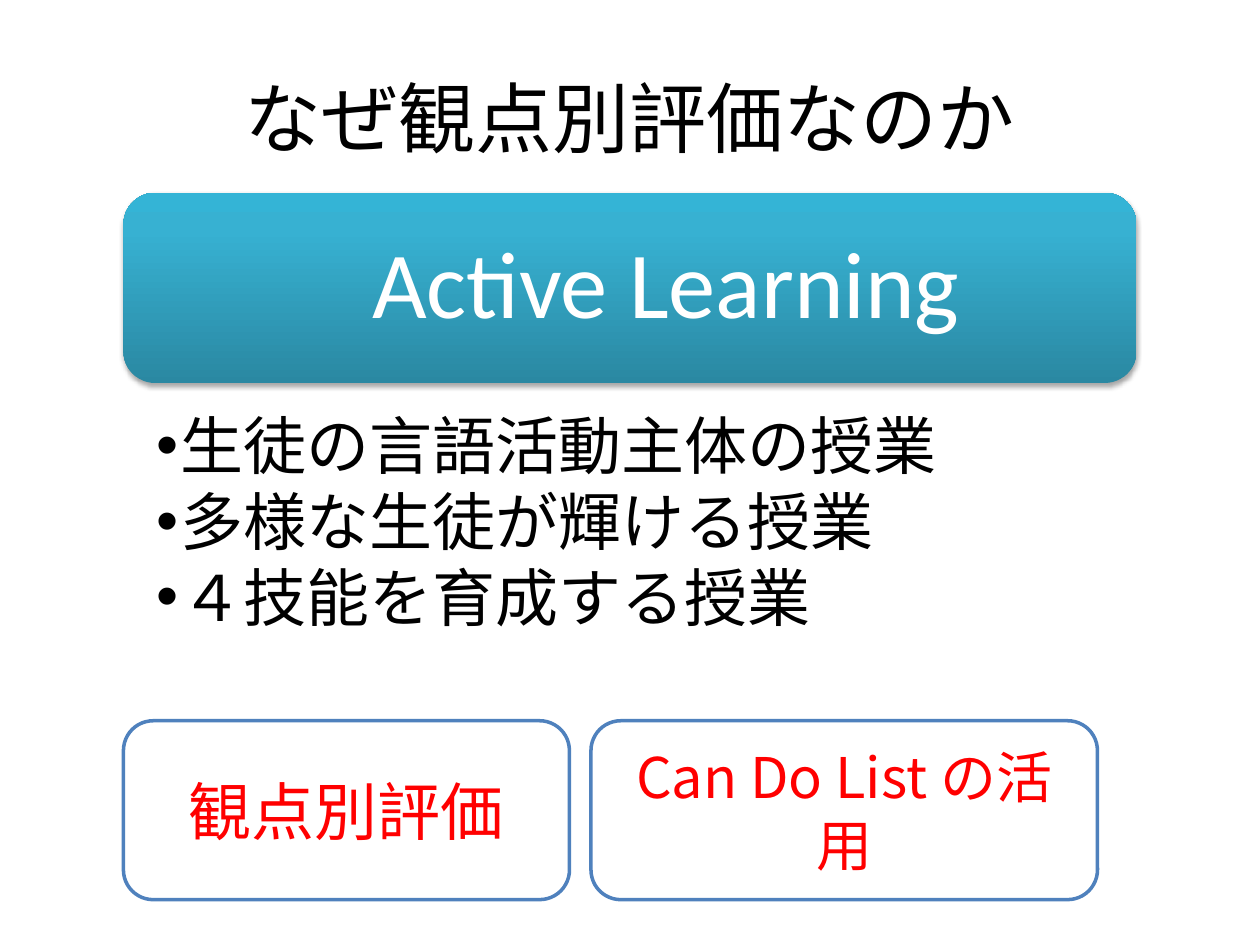
from lxml.etree import SubElement
from pptx import Presentation
from pptx.dml.color import RGBColor
from pptx.enum.shapes import MSO_SHAPE
from pptx.enum.text import MSO_ANCHOR, PP_ALIGN
from pptx.oxml import parse_xml
from pptx.oxml.ns import nsdecls, qn
from pptx.util import Inches, Pt

WIDTH, HEIGHT = 10, 7.5
LEFT = 0.98
FONT, CJK_FONT = "Calibri", "Noto Sans CJK JP"
BLACK, WHITE, RED, BLUE = "000000", "FFFFFF", "FF0000", "4F81BD"
BANNER_STOPS = ((0, "2A88A2"), (80, "37B1D2"), (100, "34B4D6"))


def color(value):
    return RGBColor.from_string(value)


def inches(box):
    return [Inches(length) for length in box]


def prepare_frame(shape, anchor, insets=(0.1, 0.05, 0.1, 0.05)):
    frame = shape.text_frame
    frame.word_wrap = True
    frame.vertical_anchor = anchor
    (frame.margin_left, frame.margin_top,
     frame.margin_right, frame.margin_bottom) = inches(insets)
    return frame


def format_run(run, size, value, font=FONT):
    run.font.size = Pt(size)
    run.font.name = font
    run.font.color.rgb = color(value)


def add_rounded_box(slide, box):
    shape = slide.shapes.add_shape(MSO_SHAPE.ROUNDED_RECTANGLE, *inches(box))
    shape.shadow.inherit = False
    return shape


def add_title(slide, box, text):
    frame = prepare_frame(slide.shapes.add_textbox(*inches(box)), MSO_ANCHOR.MIDDLE)
    frame.text = text
    paragraph = frame.paragraphs[0]
    paragraph.alignment = PP_ALIGN.CENTER
    format_run(paragraph.runs[0], 44, BLACK)


def style_banner(shape):
    """Give the shape a three-stop upward gradient and a soft shadow."""
    shape.line.fill.background()
    stops = "".join(
        f'<a:gs pos="{position * 1000}"><a:srgbClr val="{value}"/></a:gs>'
        for position, value in BANNER_STOPS)
    gradient = parse_xml(
        f'<a:gradFill {nsdecls("a")} rotWithShape="1"><a:gsLst>{stops}</a:gsLst>'
        '<a:lin ang="16200000" scaled="0"/></a:gradFill>')
    properties = shape._element.spPr
    properties.find(qn("a:prstGeom")).addnext(gradient)
    shadow = SubElement(properties.find(qn("a:effectLst")), qn("a:outerShdw"),
                        blurRad=str(Pt(3.1)), dist=str(Pt(1.8)),
                        dir="5400000", rotWithShape="0")
    shade = SubElement(shadow, qn("a:srgbClr"), val=BLACK)
    SubElement(shade, qn("a:alpha"), val="35000")


def add_banner(slide, box, text):
    shape = add_rounded_box(slide, box)
    style_banner(shape)
    frame = prepare_frame(shape, MSO_ANCHOR.MIDDLE, (1.9, 0.15, 0.15, 0.15))
    frame.text = text
    paragraph = frame.paragraphs[0]
    paragraph.alignment = PP_ALIGN.LEFT
    paragraph.line_spacing = 0.9
    format_run(paragraph.runs[0], 54, WHITE)


def add_bullets(slide, box, lines):
    frame = prepare_frame(slide.shapes.add_textbox(*inches(box)),
                          MSO_ANCHOR.TOP, (0.26, 0.05, 0.28, 0.05))
    frame.text = "\n".join(lines)
    hanging = Inches(0.19)
    for paragraph in frame.paragraphs:
        properties = paragraph._p.get_or_add_pPr()
        properties.set("marL", str(hanging))
        properties.set("indent", str(-hanging))
        SubElement(properties, qn("a:buFont"), typeface="Arial")
        SubElement(properties, qn("a:buChar"), char="•")
        format_run(paragraph.runs[0], 36, BLACK)


def add_outlined_box(slide, box, size, parts):
    """Add a box whose text is made of (text, font) parts."""
    shape = add_rounded_box(slide, box)
    shape.fill.background()
    shape.line.color.rgb = color(BLUE)
    shape.line.width = Pt(2)
    paragraph = prepare_frame(shape, MSO_ANCHOR.MIDDLE).paragraphs[0]
    paragraph.alignment = PP_ALIGN.CENTER
    for text, font in parts:
        run = paragraph.add_run()
        run.text = text
        format_run(run, size, RED, font)


def add_methods(slide, box):
    left, top, width, height = box
    gap = 0.17
    first = 3.54
    second = width - first - gap
    add_outlined_box(slide, (left, top, first, height), 36, [("観点別評価", FONT)])
    add_outlined_box(slide, (left + first + gap, top, second, height), 32,
                     [("Can Do List ", CJK_FONT), ("の活用", FONT)])


def main():
    presentation = Presentation()
    presentation.slide_width, presentation.slide_height = inches((WIDTH, HEIGHT))
    slide = presentation.slides.add_slide(presentation.slide_layouts[6])
    content_width = WIDTH - 2 * LEFT
    add_title(slide, (0.5, 0.3, WIDTH - 1, 1.25), "なぜ観点別評価なのか")
    add_banner(slide, (LEFT, 1.53, content_width, 1.51), "Active Learning")
    add_bullets(slide, (LEFT, 3.18, content_width, 2.65), [
        "生徒の言語活動主体の授業",
        "多様な生徒が輝ける授業",
        "４技能を育成する授業",
    ])
    add_methods(slide, (LEFT, 5.72, 7.73, 1.42))
    presentation.save("out.pptx")


if __name__ == "__main__":
    main()
